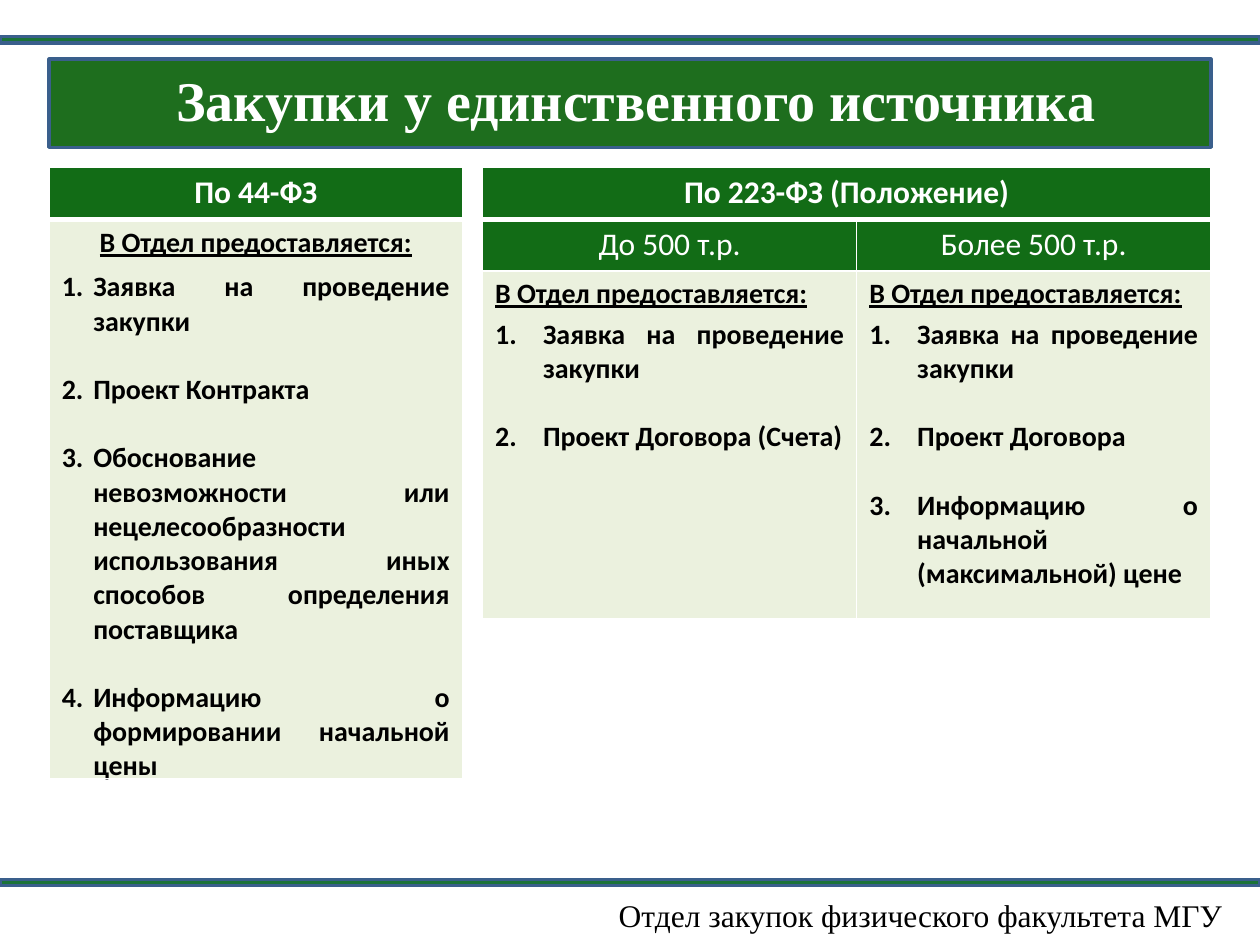
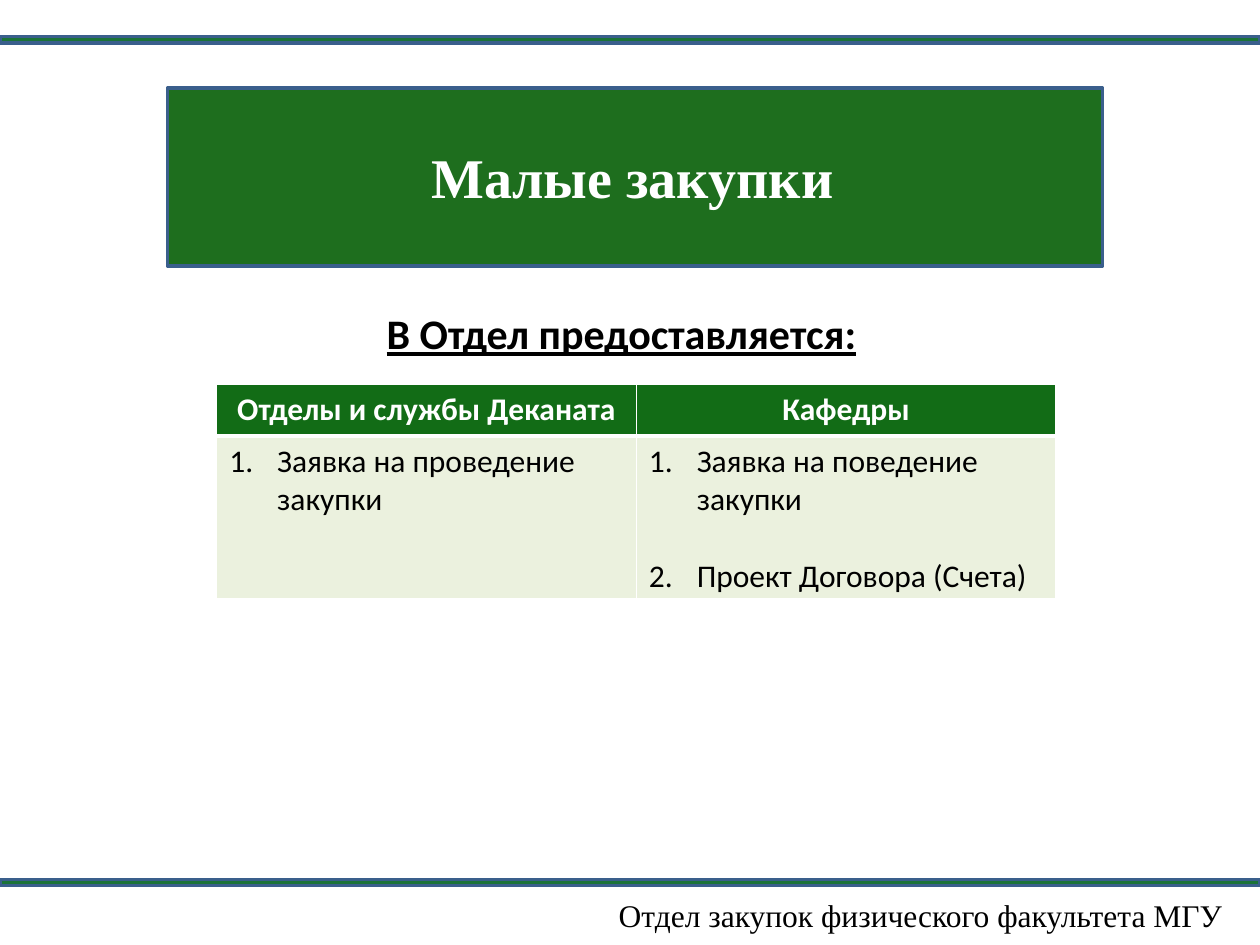
"""Build two slides on the documents required for single-source and small purchases."""
from lxml import etree
from pptx import Presentation
from pptx.dml.color import RGBColor
from pptx.enum.shapes import MSO_SHAPE
from pptx.enum.text import MSO_ANCHOR, MSO_AUTO_SIZE, PP_ALIGN
from pptx.oxml.ns import qn
from pptx.util import Inches, Pt

RECTANGLE = MSO_SHAPE.RECTANGLE
MIDDLE, NO_AUTOFIT = MSO_ANCHOR.MIDDLE, MSO_AUTO_SIZE.NONE
LEFT, CENTER, RIGHT, JUSTIFY = PP_ALIGN.LEFT, PP_ALIGN.CENTER, PP_ALIGN.RIGHT, PP_ALIGN.JUSTIFY

BLACK = RGBColor(0x00, 0x00, 0x00)
WHITE = RGBColor(0xFF, 0xFF, 0xFF)
STRIPE_GREEN = RGBColor(0x1B, 0x73, 0x38)
BANNER_GREEN = RGBColor(0x1E, 0x6E, 0x1E)
HEADER_GREEN = RGBColor(0x12, 0x6C, 0x16)
CELL_GREEN = RGBColor(0xEB, 0xF1, 0xDE)
OUTLINE_BLUE = RGBColor(0x3A, 0x5F, 0x8C)
SERIF, SANS = "Times New Roman", "Calibri"

FOOTER = "Отдел закупок физического факультета МГУ"
SUBMITTED = "В Отдел предоставляется:"
REQUEST = "Заявка на проведение закупки"

SLIDES = [
    {
        "title": "Закупки у единственного источника",
        "title_box": (0.62, 0.47, 8.86, 0.64),
        "banner": (0.39, 0.47, 9.22, 0.7),
        "subtitle": None,
        "tables": [
            {
                "position": (0.39, 1.33), "widths": [3.28], "heights": [0.41, 4.44],
                "headers": [["По 44-ФЗ"]],
                "lists": [[
                    REQUEST,
                    "Проект Контракта",
                    "Обоснование невозможности или нецелесообразности "
                    "использования иных способов определения поставщика",
                    "Информацию о формировании начальной цены",
                ]],
                "heading": SUBMITTED, "heading_align": CENTER, "heading_gap": 6,
                "size": 16, "bold": True, "align": JUSTIFY, "indent": 0.25,
            },
            {
                "position": (3.83, 1.33), "widths": [2.97, 2.81], "heights": [0.41, 0.41, 2.76],
                "headers": [["По 223-ФЗ (Положение)"], ["До 500 т.р.", "Более 500 т.р."]],
                "lists": [
                    [REQUEST, "Проект Договора (Счета)"],
                    [REQUEST, "Проект Договора", "Информацию о начальной (максимальной) цене"],
                ],
                "heading": SUBMITTED, "heading_align": LEFT, "heading_gap": 3.5,
                "size": 16, "bold": True, "align": JUSTIFY, "indent": 0.38,
            },
        ],
    },
    {
        "title": "Малые закупки",
        "title_box": (0.59, 1.08, 8.86, 0.64),
        "banner": (1.33, 0.7, 7.42, 1.41),
        "subtitle": SUBMITTED,
        "tables": [
            {
                "position": (1.72, 3.05), "widths": [3.33, 3.33], "heights": [0.41, 1.29],
                "headers": [["Отделы и службы Деканата", "Кафедры"]],
                "lists": [[REQUEST], ["Заявка на поведение закупки", "Проект Договора (Счета)"]],
                "heading": None,
                "size": 18, "bold": False, "align": LEFT, "indent": 0.38,
            },
        ],
    },
]


def write(text_frame, text, size=18, font=SANS, color=BLACK, bold=False, underline=False,
          align=LEFT, space_before=0, indent=None):
    """Write a paragraph, numbered when an indent is given."""
    paragraph = text_frame.paragraphs[0]
    if paragraph.runs:
        paragraph = text_frame.add_paragraph()
    paragraph.alignment = align
    paragraph.space_before = Pt(space_before)
    run = paragraph.add_run()
    run.text = text
    run.font.size, run.font.name = Pt(size), font
    run.font.bold, run.font.underline = bold, underline
    run.font.color.rgb = color
    if indent:
        properties = paragraph._p.get_or_add_pPr()
        properties.set("marL", str(Inches(indent)))
        properties.set("indent", str(-Inches(indent)))
        etree.SubElement(properties, qn("a:buFont"), typeface="+mj-lt")
        etree.SubElement(properties, qn("a:buAutoNum"), type="arabicPeriod")


def format_cell(cell, fill, top, bottom):
    """Give a cell its fill and white borders."""
    properties = cell._tc.get_or_add_tcPr()
    for side, width in (("L", 1), ("R", 1), ("T", top), ("B", bottom)):
        line = etree.SubElement(properties, qn(f"a:ln{side}"), w=str(Pt(width)))
        line_fill = etree.SubElement(line, qn("a:solidFill"))
        etree.SubElement(line_fill, qn("a:srgbClr"), val=str(WHITE))
    cell.fill.solid()
    cell.fill.fore_color.rgb = fill


presentation = Presentation()
presentation.slide_width, presentation.slide_height = Inches(10), Inches(7.5)
title_layout = presentation.slide_layouts[5]

for content in SLIDES:
    slide = presentation.slides.add_slide(title_layout)
    title = slide.shapes.title
    bars = [
        ((0, 0.29, 10, 0.05), STRIPE_GREEN),
        ((0, 6.98, 10, 0.05), STRIPE_GREEN),
        (content["banner"], BANNER_GREEN),
    ]
    for box, color in bars:
        bar = slide.shapes.add_shape(RECTANGLE, *map(Inches, box))
        bar.shadow.inherit = False
        bar.fill.solid()
        bar.fill.fore_color.rgb = color
        bar.line.color.rgb = OUTLINE_BLUE
        bar.line.width = Pt(2)
        title.element.addprevious(bar.element)

    title.left, title.top, title.width, title.height = map(Inches, content["title_box"])
    title.text_frame.auto_size = NO_AUTOFIT
    title.text_frame.vertical_anchor = MIDDLE
    write(title.text_frame, content["title"], size=32, font=SERIF, color=WHITE,
          bold=True, align=CENTER)

    footer = slide.shapes.add_textbox(Inches(4.8), Inches(7.06), Inches(5), Inches(0.4))
    footer.text_frame.word_wrap = True
    write(footer.text_frame, FOOTER, font=SERIF, align=RIGHT)

    if content["subtitle"]:
        subtitle = slide.shapes.add_textbox(Inches(2.97), Inches(2.39), Inches(4.06), Inches(0.5))
        subtitle.text_frame.word_wrap = True
        write(subtitle.text_frame, content["subtitle"], size=24, bold=True, underline=True)

    for block in content["tables"]:
        widths, heights, headers = block["widths"], block["heights"], block["headers"]
        left, top = block["position"]
        table = slide.shapes.add_table(
            len(heights), len(widths), Inches(left), Inches(top),
            Inches(sum(widths)), Inches(sum(heights))).table
        for column, width in zip(table.columns, widths):
            column.width = Inches(width)
        for row_index, height in enumerate(heights):
            table.rows[row_index].height = Inches(height)
            fill = HEADER_GREEN if row_index < len(headers) else CELL_GREEN
            for cell in table.rows[row_index].cells:
                format_cell(cell, fill, top=3 if row_index == 1 else 1,
                            bottom=3 if row_index == 0 else 1)

        for row_index, labels in enumerate(headers):
            if len(labels) < len(widths):
                table.cell(row_index, 0).merge(table.cell(row_index, len(widths) - 1))
            for column_index, label in enumerate(labels):
                write(table.cell(row_index, column_index).text_frame, label, color=WHITE,
                      bold=row_index == 0, align=CENTER)

        for column_index, items in enumerate(block["lists"]):
            cell = table.cell(len(headers), column_index)
            cell.margin_bottom = 0
            gap = 0
            if block["heading"]:
                write(cell.text_frame, block["heading"], size=block["size"], bold=True,
                      underline=True, align=block["heading_align"])
                gap = block["heading_gap"]
            for item in items:
                write(cell.text_frame, item, size=block["size"], bold=block["bold"],
                      align=block["align"], space_before=gap, indent=block["indent"])
                gap = block["size"] * 1.22

presentation.save("out.pptx")
